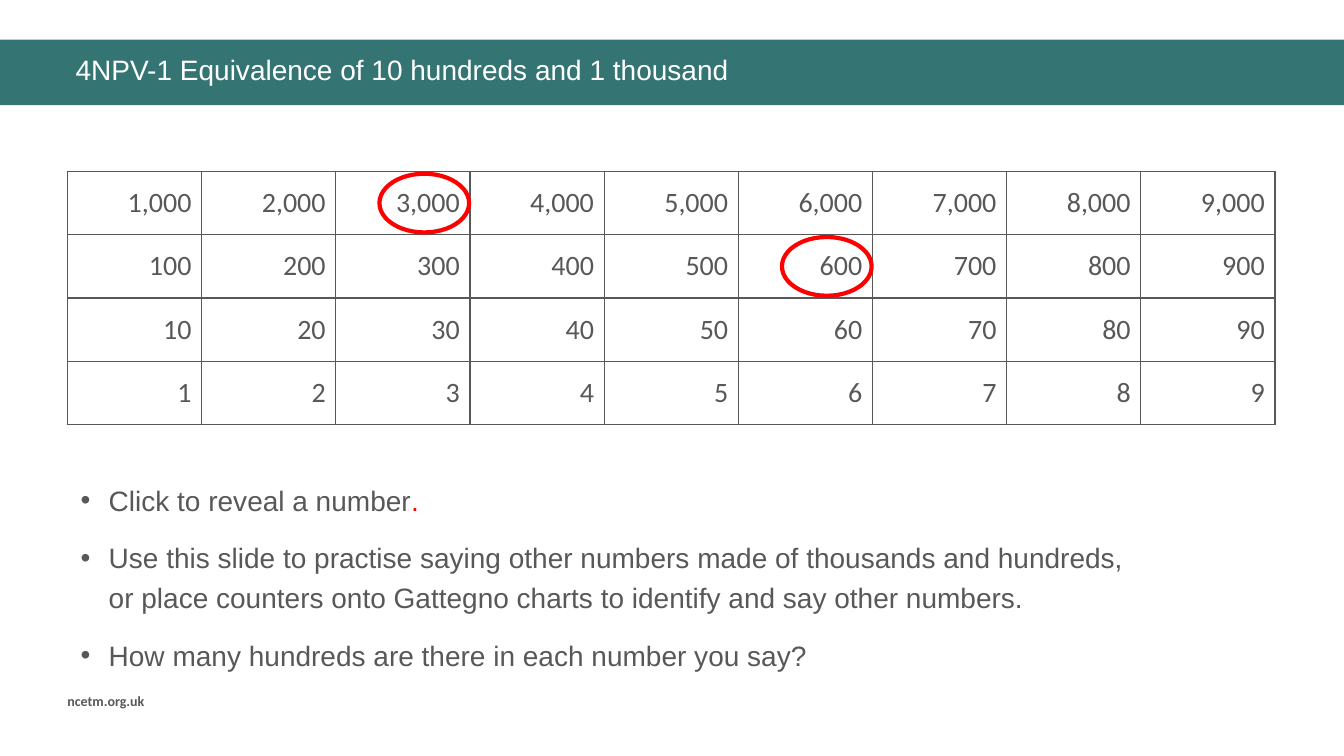
import pptx
import pptx.util
import pptx.dml.color
import pptx.enum.shapes
import pptx.enum.text
import pptx.oxml

Cm = pptx.util.Cm
Pt = pptx.util.Pt
RGB = pptx.dml.color.RGBColor
SHAPE = pptx.enum.shapes.MSO_SHAPE
ALIGN = pptx.enum.text.PP_ALIGN
ANCHOR = pptx.enum.text.MSO_ANCHOR

TEAL = RGB(0x34, 0x75, 0x74)
GREY = RGB(0x58, 0x58, 0x58)
RED = RGB(0xFF, 0x00, 0x00)
WHITE = RGB(0xFF, 0xFF, 0xFF)
NS = 'xmlns:a="http://schemas.openxmlformats.org/drawingml/2006/main"'


def style(r, size, name, color, bold=False):
    r.font.size = Pt(size)
    r.font.name = name
    r.font.color.rgb = color
    r.font.bold = bold


def add_header(s, left, top, width, height):
    band = s.shapes.add_shape(SHAPE.RECTANGLE, left, top, width, height)
    band.shadow.inherit = False
    band.fill.solid()
    band.fill.fore_color.rgb = TEAL
    band.line.fill.background()
    title = s.shapes.title
    title._element.addprevious(band._element)
    title.left, title.top = left + Cm(1.65), top + Cm(0.3)
    title.width, title.height = width - Cm(2.57), Cm(1.2)
    tf = title.text_frame
    tf.text = "4NPV-1 Equivalence of 10 hundreds and 1 thousand"
    tf.vertical_anchor = ANCHOR.TOP
    tf.auto_size = pptx.enum.text.MSO_AUTO_SIZE.NONE
    p = tf.paragraphs[0]
    p.alignment = ALIGN.LEFT
    p.line_spacing = 0.9
    style(p.runs[0], 20, "Arial", WHITE)


def format_cell(cell, text):
    cell.fill.solid()
    cell.fill.fore_color.rgb = WHITE
    cell.vertical_anchor = ANCHOR.MIDDLE
    cell.text = text
    p = cell.text_frame.paragraphs[0]
    p.alignment = ALIGN.RIGHT
    style(p.runs[0], 20, "Calibri", GREY)
    tc_pr = cell._tc.get_or_add_tcPr()
    for i, side in enumerate(("lnL", "lnR", "lnT", "lnB")):
        tc_pr.insert(i, pptx.oxml.parse_xml(
            f'<a:{side} {NS} w="12700"><a:solidFill>'
            f'<a:srgbClr val="{GREY}"/></a:solidFill></a:{side}>'))


def add_gattegno_chart(s, left, top, width, height, circled):
    powers = (1000, 100, 10, 1)
    frame = s.shapes.add_table(len(powers), 9, left, top, width, height)
    table = frame.table
    table.first_row = table.horz_banding = False
    col_w, row_h = width // 9, height // len(powers)
    for col in table.columns:
        col.width = col_w
    for i, power in enumerate(powers):
        table.rows[i].height = row_h
        for j in range(9):
            format_cell(table.cell(i, j), f"{(j + 1) * power:,}")
    ring_w, ring_h = Cm(2.26), Cm(1.48)
    for i, j in circled:
        ring = s.shapes.add_shape(
            SHAPE.OVAL, left + (j + 1) * col_w - ring_w - Cm(0.02),
            top + i * row_h + (row_h - ring_h) // 2, ring_w, ring_h)
        ring.shadow.inherit = False
        ring.fill.background()
        ring.line.color.rgb = RED
        ring.line.width = Pt(3)


def add_prompts(s, left, top, width, height):
    prompts = (
        (("Click to reveal a number", GREY), (".", RED)),
        (("Use this slide to practise saying other numbers made of thousands "
          "and hundreds, or place counters onto Gattegno charts to identify "
          "and say other numbers.", GREY),),
        (("How many hundreds are there in each number you say?", GREY),),
    )
    tf = s.shapes.add_textbox(left, top, width, height).text_frame
    tf.word_wrap = True
    for i, parts in enumerate(prompts):
        p = tf.add_paragraph() if i else tf.paragraphs[0]
        p.line_spacing = 1.2
        p.space_before = Pt(6 if i else 0)
        p.space_after = Pt(6)
        p_pr = p._p.get_or_add_pPr()
        p_pr.set("marL", str(Cm(0.71)))
        p_pr.set("indent", str(-Cm(0.71)))
        for xml in (f'<a:buClr {NS}><a:srgbClr val="{GREY}"/></a:buClr>',
                    f'<a:buFont {NS} typeface="Arial"/>',
                    f'<a:buChar {NS} char="•"/>'):
            p_pr.append(pptx.oxml.parse_xml(xml))
        for text, color in parts:
            r = p.add_run()
            r.text = text
            style(r, 20, "Arial", color)


def add_footer(s, left, top, width, height):
    tf = s.shapes.add_textbox(left, top, width, height).text_frame
    tf.text = "ncetm.org.uk"
    style(tf.paragraphs[0].runs[0], 10, "Calibri", GREY, bold=True)


def main():
    prs = pptx.Presentation()
    prs.slide_width, prs.slide_height = Cm(33.87), Cm(19.05)
    s = prs.slides.add_slide(prs.slide_layouts[5])
    add_header(s, 0, Cm(1), prs.slide_width, Cm(1.65))
    add_footer(s, Cm(1.45), Cm(17.32), Cm(3.07), Cm(0.69))
    add_gattegno_chart(s, Cm(1.7), Cm(4.32), Cm(30.43), Cm(6.38),
                       ((1, 5), (0, 2)))
    add_prompts(s, Cm(1.78), Cm(11.89), Cm(27.05), Cm(5.54))
    prs.save("out.pptx")


if __name__ == "__main__":
    main()
